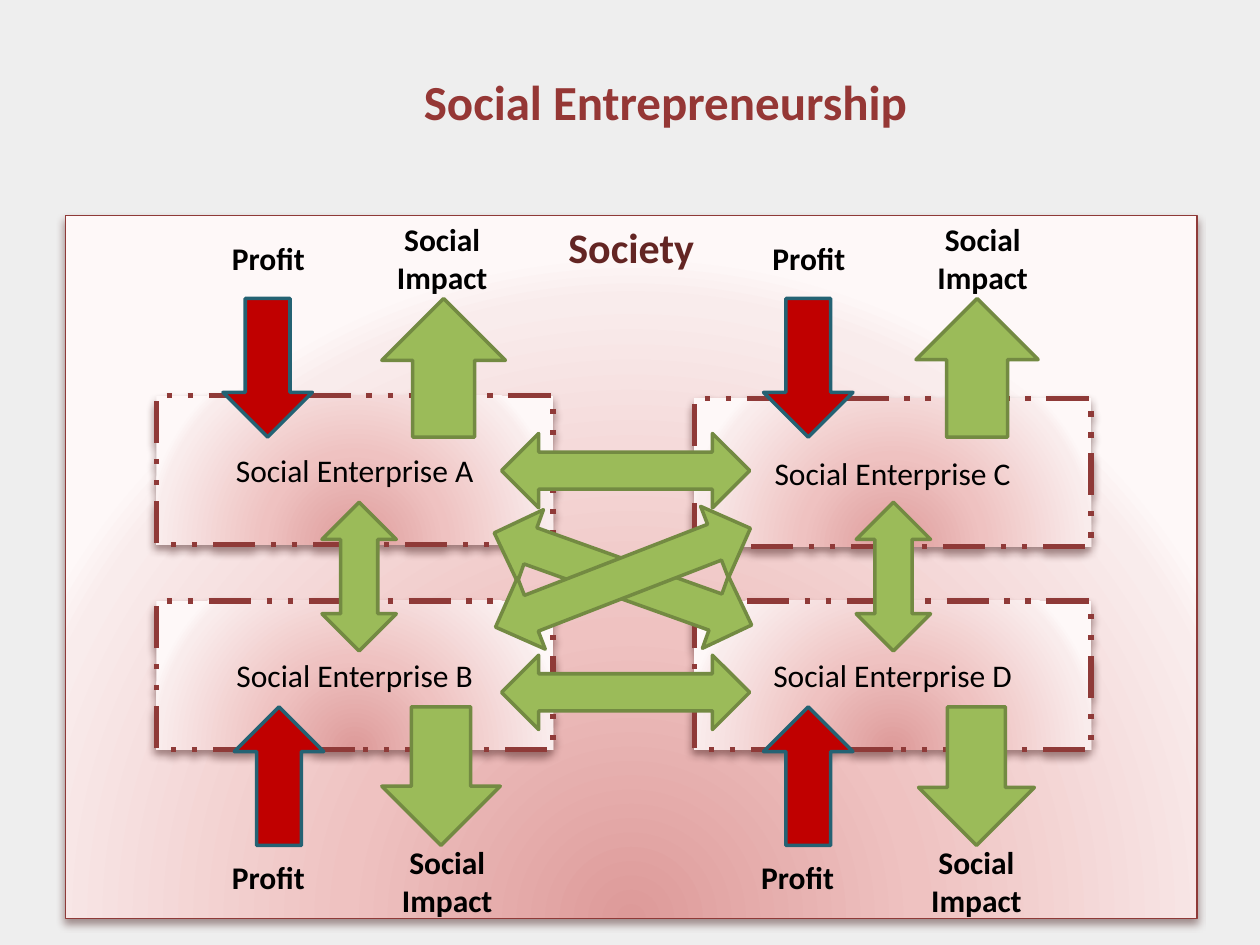
from pptx import Presentation
from pptx.dml.color import RGBColor
from pptx.enum.dml import MSO_LINE
from pptx.enum.shapes import MSO_SHAPE
from pptx.enum.text import MSO_ANCHOR, PP_ALIGN
from pptx.oxml import parse_xml
from pptx.oxml.ns import nsdecls, qn
from pptx.util import Pt

FONT = "Calibri"
COLORS = {
    "background": "EEEEEE", "title": "953735", "society": "632523", "text": "000000",
    "frame": "8F3A38", "shadow": "441B1A",
    "profit": "C00000", "profit_line": "246273",
    "impact": "9BBB59", "impact_line": "738A42",
}
GRADIENT = [(0, "DD9A99"), (43, "EFC2C1"), (93, "F9ECEC"), (100, "FEF8F8")]

TITLE = ("Social Entrepreneurship", (150.5, 37.4, 459.4, 41))
SOCIETY = ("Society", (37.4, 123.1, 646.6, 401.8))
ENTERPRISES = [
    ("Social Enterprise Α", 89.3, 226.1),
    ("Social Enterprise B", 89.3, 343.4),
    ("Social Enterprise C", 396.7, 227.5),
    ("Social Enterprise D", 396.7, 343.4),
]
ENTERPRISE_SIZE = (226.8, 85)

UPPER_ARROW_TOP, LOWER_ARROW_TOP, ARROW_HEIGHT = 170.6, 403.9, 79.2
FLOWS = [
    ("profit", 127.4, 51.1, "upper"), ("impact", 218.2, 70.6, "upper"),
    ("profit", 436.3, 51.1, "upper"), ("impact", 523.4, 69.8, "upper"),
    ("profit", 133.9, 51.1, "lower"), ("impact", 218.2, 67.7, "lower"),
    ("profit", 436.3, 51.1, "lower"), ("impact", 524.9, 66.2, "lower"),
]
LABELS = [
    ("Profit", (96.5, 28.8), [(105.1, 133.2), (414, 133.2), (105.1, 486.7), (407.5, 486.7)]),
    ("Social Impact", (108, 51.1), [(198.7, 122.4), (507.6, 122.4), (201.6, 478.1), (504, 478.1)]),
]
EXCHANGES = [
    ((286.6, 247.7, 141.8, 42.5), 0),
    ((286.6, 374.4, 141.8, 42.5), 0),
    ((277.9, 308.9, 156.2, 43.9), 19.7),
    ((277.9, 308.2, 156.2, 43.9), 338.8),
    ((162.7, 308.2, 85, 42.5), 90),
    ((468, 308.2, 85, 42.5), 90),
]


def color(name):
    return RGBColor.from_string(COLORS[name])


def write(shape, text, size, color_name, bold, anchor):
    frame = shape.text_frame
    frame.text = text
    frame.word_wrap = True
    frame.vertical_anchor = anchor
    paragraph = frame.paragraphs[0]
    paragraph.alignment = PP_ALIGN.CENTER
    font = paragraph.runs[0].font
    font.name, font.size, font.bold = FONT, Pt(size), bold
    font.color.rgb = color(color_name)


def add_panel(slide, box, line_width, dash=None):
    shape = slide.shapes.add_shape(MSO_SHAPE.RECTANGLE, *map(Pt, box))
    shape.line.color.rgb = color("frame")
    shape.line.width = Pt(line_width)
    if dash is not None:
        shape.line.dash_style = dash
    stops = "".join(
        f'<a:gs pos="{position * 1000}"><a:srgbClr val="{value}"/></a:gs>'
        for position, value in GRADIENT
    )
    properties = shape.element.spPr
    properties.find(qn("a:prstGeom")).addnext(parse_xml(
        f'<a:gradFill {nsdecls("a")} rotWithShape="1"><a:gsLst>{stops}</a:gsLst>'
        '<a:path path="circle"><a:fillToRect l="50000" t="130000" r="50000" b="-30000"/>'
        '</a:path></a:gradFill>'
    ))
    shape.shadow.inherit = False
    properties.find(qn("a:effectLst")).append(parse_xml(
        f'<a:outerShdw {nsdecls("a")} blurRad="{Pt(4.5)}" dist="{Pt(3)}" dir="5400000" '
        f'rotWithShape="0"><a:srgbClr val="{COLORS["shadow"]}"><a:alpha val="48000"/>'
        '</a:srgbClr></a:outerShdw>'
    ))
    return shape


def add_arrow(slide, kind, box, color_name, rotation):
    shape = slide.shapes.add_shape(kind, *map(Pt, box))
    shape.rotation = rotation
    shape.shadow.inherit = False
    shape.fill.solid()
    shape.fill.fore_color.rgb = color(color_name)
    shape.line.color.rgb = color(f"{color_name}_line")
    shape.line.width = Pt(2)


def main():
    presentation = Presentation()
    presentation.slide_width, presentation.slide_height = Pt(720), Pt(540)
    slide = presentation.slides.add_slide(presentation.slide_layouts[5])
    slide.background.fill.solid()
    slide.background.fill.fore_color.rgb = color("background")

    text, box = TITLE
    title = slide.shapes.title
    title.left, title.top, title.width, title.height = map(Pt, box)
    write(title, text, 28, "title", True, MSO_ANCHOR.TOP)

    text, box = SOCIETY
    write(add_panel(slide, box, 0.75), text, 24, "society", True, MSO_ANCHOR.TOP)

    for text, left, top in ENTERPRISES:
        panel = add_panel(slide, (left, top, *ENTERPRISE_SIZE), 3, MSO_LINE.DASH_DOT_DOT)
        write(panel, text, 18, "text", False, MSO_ANCHOR.MIDDLE)

    for flow, left, width, row in FLOWS:
        top = UPPER_ARROW_TOP if row == "upper" else LOWER_ARROW_TOP
        points_down = (flow == "profit") == (row == "upper")
        add_arrow(slide, MSO_SHAPE.DOWN_ARROW, (left, top, width, ARROW_HEIGHT),
                  flow, 0 if points_down else 180)

    for text, size, positions in LABELS:
        for position in positions:
            label = slide.shapes.add_textbox(*map(Pt, position + size))
            write(label, text, 18, "text", True, MSO_ANCHOR.TOP)

    for box, rotation in EXCHANGES:
        add_arrow(slide, MSO_SHAPE.LEFT_RIGHT_ARROW, box, "impact", rotation)

    presentation.save("out.pptx")


if __name__ == "__main__":
    main()
